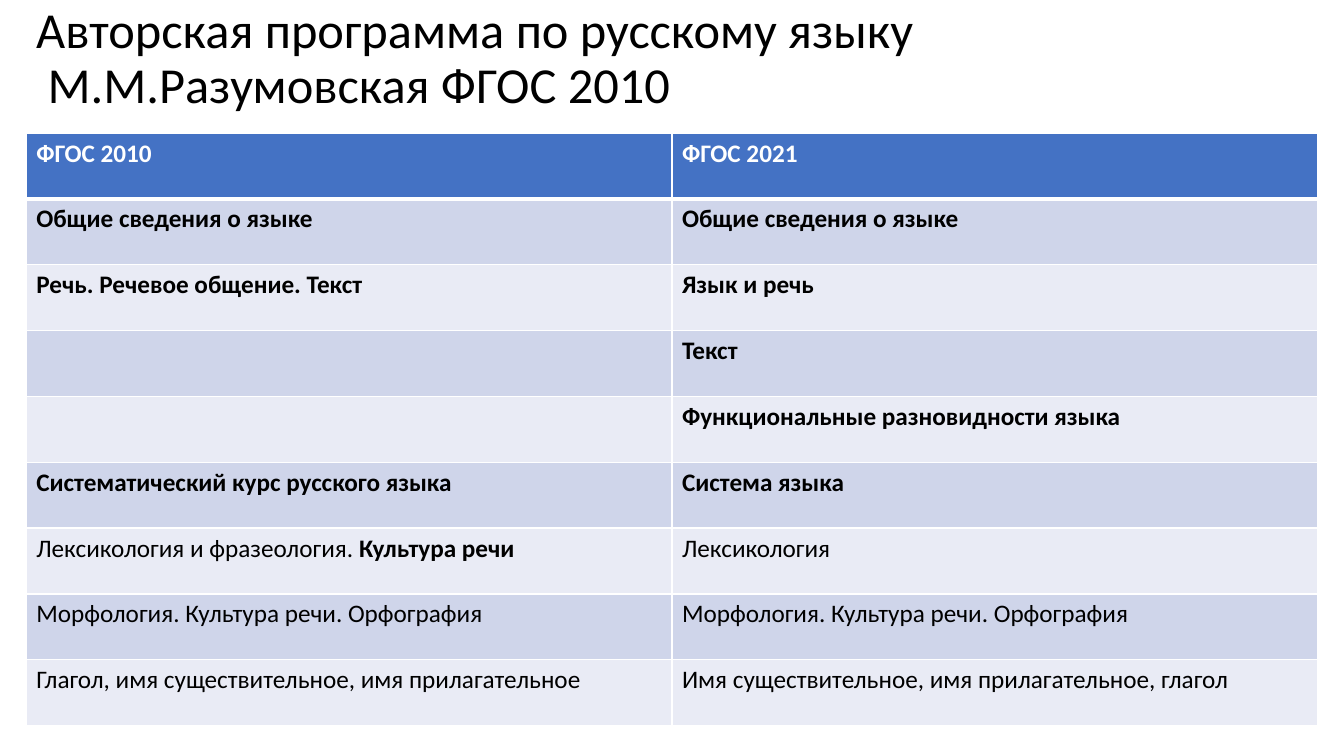
from lxml import etree
from pptx import Presentation
from pptx.dml.color import RGBColor
from pptx.enum.text import MSO_ANCHOR
from pptx.oxml.ns import qn
from pptx.util import Pt

PX = 9144  # EMU, 100 px to the inch
MIDDLE = MSO_ANCHOR.MIDDLE
FONT = "Calibri"
COLORS = {
    "text": "000000",
    "header_text": "FFFFFF",
    "header": "4472C4",
    "odd_row": "CFD5EA",
    "even_row": "E9EBF5",
    "border": "FFFFFF",
}

TITLE = "Авторская программа по русскому языку\v М.М.Разумовская ФГОС 2010"
STANDARDS = ("ФГОС 2010", "ФГОС 2021")
SECTIONS = [
    ("Общие сведения о языке", "Общие сведения о языке"),
    ("Речь. Речевое общение. Текст", "Язык и речь"),
    ("", "Текст"),
    ("", "Функциональные разновидности языка"),
    ("Систематический курс русского языка", "Система языка"),
]
TOPICS = [
    ("Лексикология и фразеология. |Культура речи", "Лексикология"),
    ("Морфология. Культура речи. Орфография",
     "Морфология. Культура речи. Орфография"),
    ("Глагол, имя существительное, имя прилагательное",
     "Имя существительное, имя прилагательное, глагол"),
]


def px(length):
    return length * PX


def color(name):
    return RGBColor.from_string(COLORS[name])


def set_font(paragraph, size, color_name):
    font = paragraph.font
    font.name, font.size = FONT, Pt(size)
    font.color.rgb = color(color_name)


def set_borders(cell, top, bottom):
    """Draw the four cell borders; top and bottom are widths in points."""
    properties = cell._tc.get_or_add_tcPr()
    sides = {"a:lnL": 1, "a:lnR": 1, "a:lnT": top, "a:lnB": bottom}
    for position, (side, width) in enumerate(sides.items()):
        line = etree.Element(qn(side), w=str(Pt(width)))
        fill = etree.SubElement(line, qn("a:solidFill"))
        etree.SubElement(fill, qn("a:srgbClr"), val=COLORS["border"])
        properties.insert(position, line)


def add_title(slide, left, top, width, height):
    box = slide.shapes.add_textbox(px(left), px(top), px(width), px(height))
    frame = box.text_frame
    frame.word_wrap = True
    frame.vertical_anchor = MIDDLE
    heading = frame.paragraphs[0]
    heading.text = TITLE
    heading.line_spacing = 0.9
    set_font(heading, 36, "text")


def fill_cell(cell, text, bold, text_color, fill):
    """Write the text; the part after "|" is always bold."""
    cell.fill.solid()
    cell.fill.fore_color.rgb = color(fill)
    paragraph = cell.text_frame.paragraphs[0]
    set_font(paragraph, 18, text_color)
    for index, part in enumerate(text.split("|") if text else []):
        run = paragraph.add_run()
        run.text = part
        run.font.bold = bold or index > 0


def add_comparison(slide, left, top, width, height):
    rows = [STANDARDS, *SECTIONS, *TOPICS]
    table = slide.shapes.add_table(len(rows), len(STANDARDS), px(left), px(top),
                                   px(width), px(height)).table
    for row, texts in enumerate(rows):
        is_header = row == 0
        band = "odd_row" if row % 2 else "even_row"
        for column, text in enumerate(texts):
            cell = table.cell(row, column)
            fill_cell(cell, text, row <= len(SECTIONS),
                      "header_text" if is_header else "text",
                      "header" if is_header else band)
            set_borders(cell, top=3 if row == 1 else 1,
                        bottom=3 if is_header else 1)


def main():
    presentation = Presentation()
    presentation.slide_width = px(1333)
    presentation.slide_height = px(750)
    slide = presentation.slides.add_slide(presentation.slide_layouts[6])
    add_title(slide, 26, 5, 1281, 108)
    add_comparison(slide, 26, 132, 1281, 588)
    presentation.save("out.pptx")


if __name__ == "__main__":
    main()
